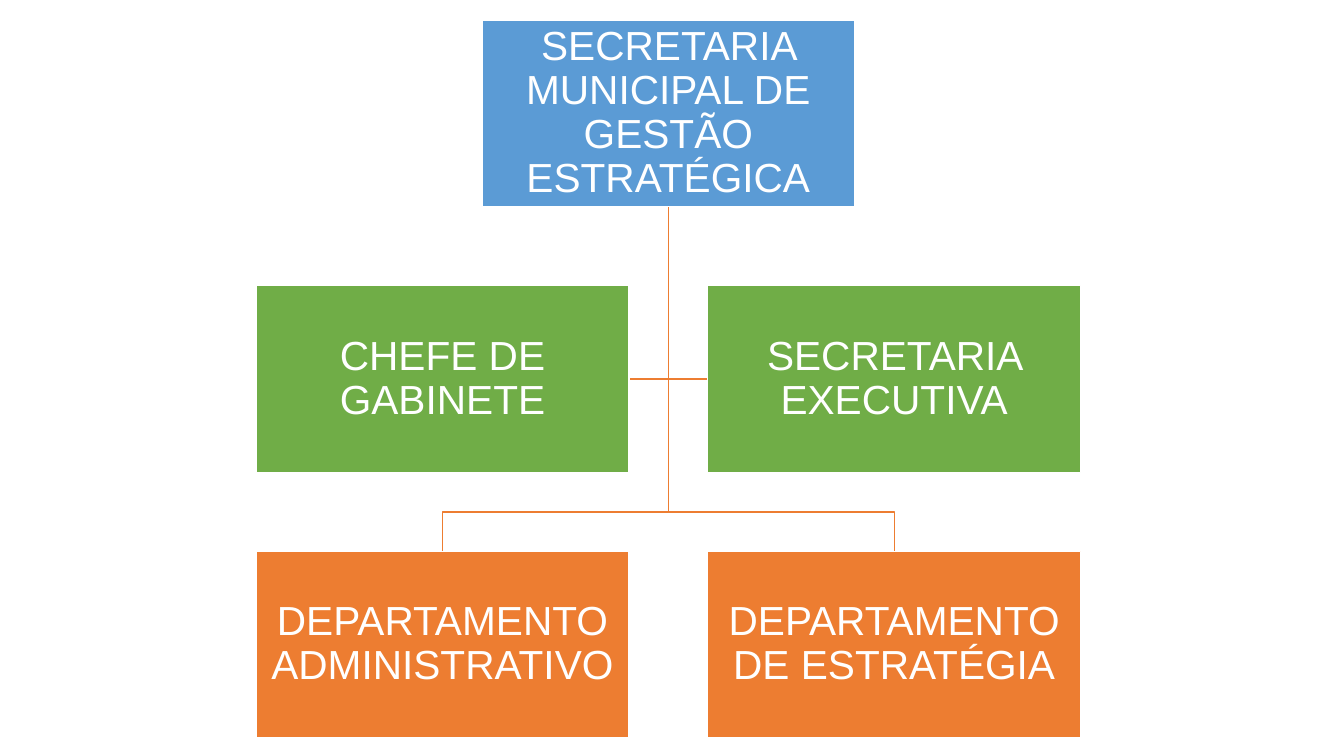
from dataclasses import dataclass
from pptx import Presentation
from pptx.dml.color import RGBColor as RGB
from pptx.enum.shapes import MSO_SHAPE as Shape
from pptx.enum.text import MSO_ANCHOR as Anchor, PP_ALIGN as Align
from pptx.util import Inches, Pt


@dataclass(frozen=True)
class Theme:
    head: RGB = RGB(0x5B, 0x9B, 0xD5)
    staff: RGB = RGB(0x70, 0xAD, 0x47)
    dept: RGB = RGB(0xED, 0x7D, 0x31)
    line: RGB = RGB(0xED, 0x7D, 0x31)
    white: RGB = RGB(0xFF, 0xFF, 0xFF)
    font: str = "Arial"
    size: Pt = Pt(29)
    rule: Pt = Pt(1)


THEME = Theme()
BOX_W, BOX_H = Inches(3.7), Inches(1.85)


def add_box(slide, left, top, text, fill):
    box = slide.shapes.add_shape(Shape.RECTANGLE, left, top, BOX_W, BOX_H)
    box.shadow.inherit = False
    box.fill.solid()
    box.fill.fore_color.rgb = fill
    box.line.color.rgb = THEME.white
    box.line.width = THEME.rule
    frame = box.text_frame
    frame.word_wrap = True
    frame.vertical_anchor = Anchor.MIDDLE
    frame.margin_left = frame.margin_right = Inches(0.02)
    frame.margin_top = frame.margin_bottom = Inches(0.02)
    para = frame.paragraphs[0]
    para.text = text
    para.alignment = Align.CENTER
    para.line_spacing = 0.9
    para.font.name = THEME.font
    para.font.size = THEME.size
    para.font.color.rgb = THEME.white


def add_branch(slide, start, *turns):
    pen = slide.shapes.build_freeform(*start)
    pen.add_line_segments(turns, close=False)
    branch = pen.convert_to_shape()
    branch.shadow.inherit = False
    branch.fill.background()
    branch.line.color.rgb = THEME.line
    branch.line.width = THEME.rule


def add_chart(slide, left, top, width, height):
    right = left + width - BOX_W
    mid = left + width // 2
    low = top + height - BOX_H
    row = (top + low) // 2
    root = (mid, top + BOX_H)
    side = row + BOX_H // 2
    bar = (row + BOX_H + low) // 2

    for x in (right, left + BOX_W):
        add_branch(slide, root, (mid, side), (x, side))
    for x in (right + BOX_W // 2, left + BOX_W // 2):
        add_branch(slide, root, (mid, bar), (x, bar), (x, low))

    for x, y, text, fill in (
            (mid - BOX_W // 2, top,
             "SECRETARIA MUNICIPAL DE GESTÃO ESTRATÉGICA", THEME.head),
            (left, low, "DEPARTAMENTO ADMINISTRATIVO", THEME.dept),
            (right, low, "DEPARTAMENTO DE ESTRATÉGIA", THEME.dept),
            (left, row, "CHEFE DE GABINETE", THEME.staff),
            (right, row, "SECRETARIA EXECUTIVA", THEME.staff)):
        add_box(slide, x, y, text, fill)


def main():
    deck = Presentation()
    deck.slide_width, deck.slide_height = Inches(13.33), Inches(7.5)
    slide = deck.slides.add_slide(deck.slide_layouts[6])
    add_chart(slide, Inches(2.54), Inches(0.2), Inches(8.18), Inches(7.12))
    deck.save("out.pptx")


if __name__ == "__main__":
    main()
